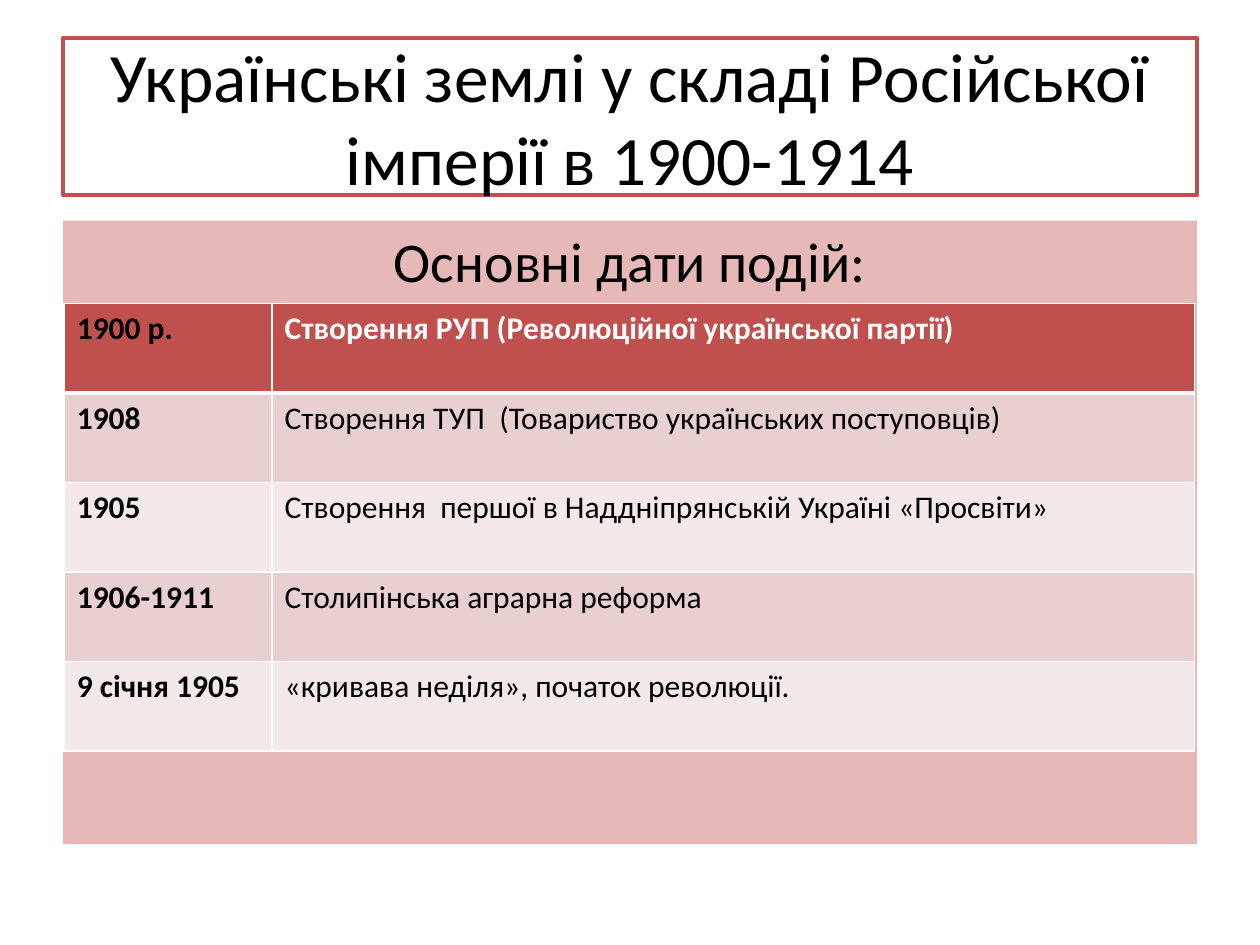
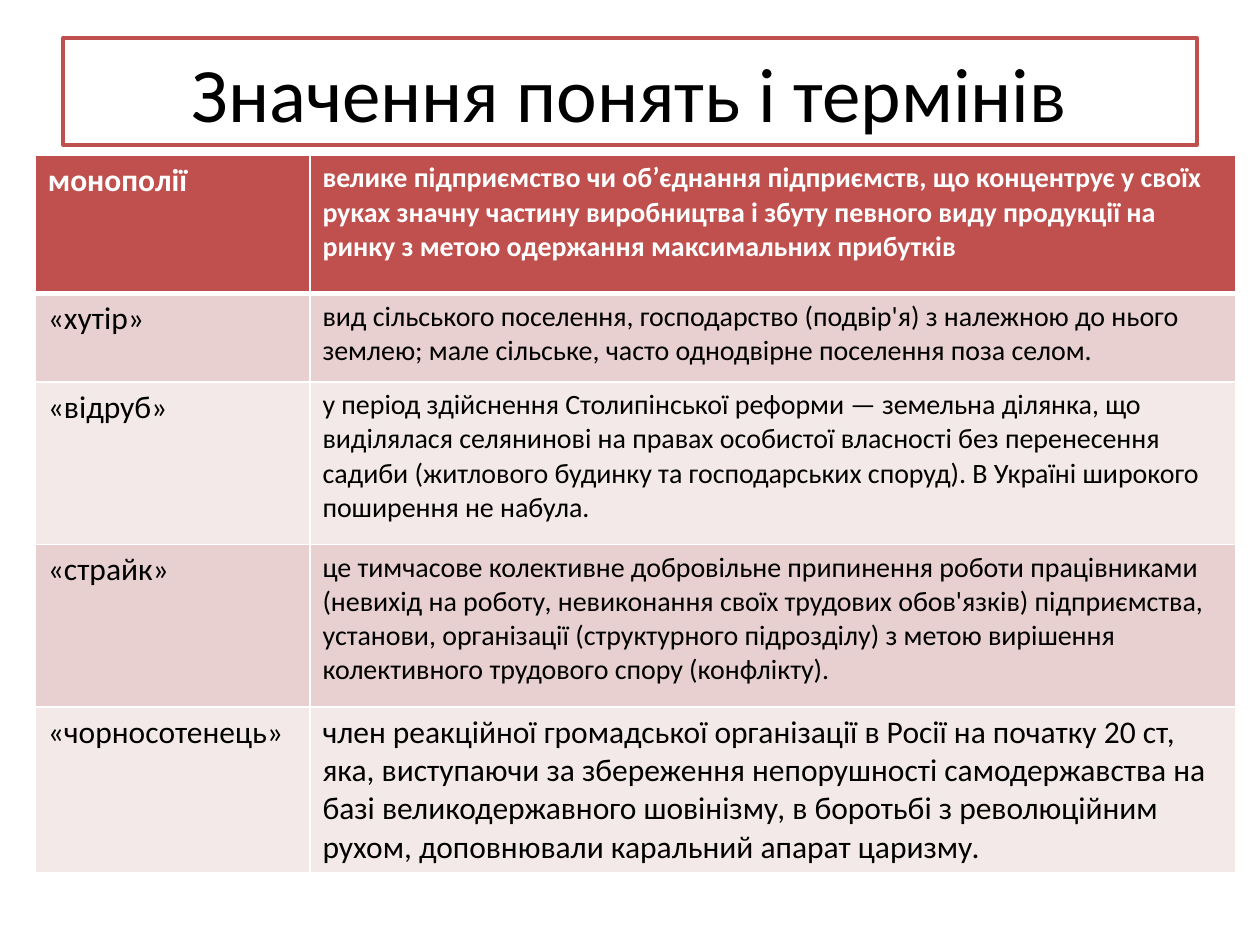
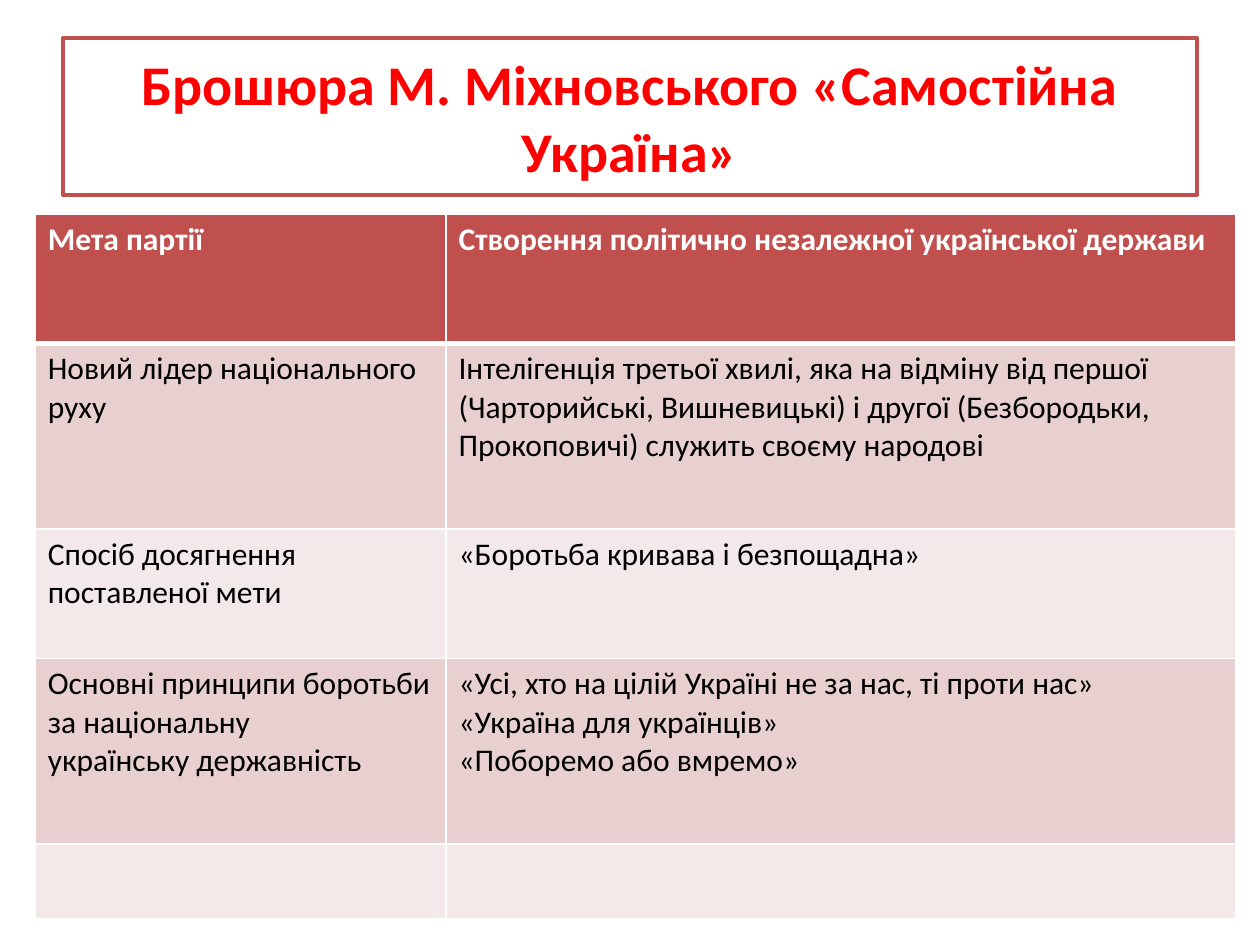
from lxml import etree
from pptx import Presentation
from pptx.dml.color import RGBColor
from pptx.enum.text import MSO_ANCHOR, MSO_AUTO_SIZE, PP_ALIGN
from pptx.oxml.ns import qn
from pptx.util import Pt

CENTER = PP_ALIGN.CENTER
LEFT = PP_ALIGN.LEFT
MIDDLE = MSO_ANCHOR.MIDDLE
NO_AUTOFIT = MSO_AUTO_SIZE.NONE

WHITE = RGBColor(0xFF, 0xFF, 0xFF)
BLACK = RGBColor(0x00, 0x00, 0x00)
BRIGHT_RED = RGBColor(0xFF, 0x00, 0x00)
RED = RGBColor(0xC0, 0x50, 0x4D)
PINK = RGBColor(0xE6, 0xB9, 0xB8)
DARK_BAND = RGBColor(0xE8, 0xD0, 0xD0)
LIGHT_BAND = RGBColor(0xF4, 0xE9, 0xE9)
FONT = "Calibri"
TITLE_LAYOUT = {True: 1, False: 5}


def write(frame, text, size=18, color=BLACK, bold=False, align=LEFT):
    frame.word_wrap = True
    for index, line in enumerate(text.split("\n")):
        para = frame.paragraphs[0] if index == 0 else frame.add_paragraph()
        para.alignment = align
        span = para.add_run()
        span.text = line
        span.font.name = FONT
        span.font.size = Pt(size)
        span.font.bold = bold
        span.font.color.rgb = color


def add_border(cell, side, width):
    line = etree.SubElement(cell._tc.get_or_add_tcPr(), qn(f"a:ln{side}"), w=str(Pt(width)))
    fill = etree.SubElement(line, qn("a:solidFill"))
    etree.SubElement(fill, qn("a:srgbClr"), val=str(WHITE))


pages = [
    {
        "title": "Українські землі у складі Російської імперії в 1900-1914",
        "title_format": {"size": 39.6},
        "title_height": 90,
        "subtitle": "Основні дати подій:",
        "table_at": (36.72, 173.52),
        "columns": (118.8, 527.04),
        "heights": [51.12] * 5,
        "bold_dates": True,
        "definition_sizes": [18] * 5,
        "rows": [
            ("1900 р.", "Створення РУП (Революційної української партії)"),
            ("1908", "Створення ТУП  (Товариство українських поступовців)"),
            ("1905", "Створення  першої в Наддніпрянській Україні «Просвіти»"),
            ("1906-1911", "Столипінська аграрна реформа"),
            ("9 січня 1905", "«кривава неділя», початок революції."),
        ],
    },
    {
        "title": "Значення понять і термінів",
        "title_format": {"size": 44},
        "title_height": 61.2,
        "subtitle": None,
        "table_at": (20.16, 88.56),
        "columns": (156.96, 529.2),
        "heights": [79.2, 50.4, 92.88, 92.88, 94.8],
        "bold_dates": False,
        "definition_sizes": [16, 16, 16, 16, 18],
        "rows": [
            ("монополії", "велике підприємство чи об’єднання підприємств, що концентрує у своїх "
             "руках значну частину виробництва і збуту певного виду продукції на ринку з метою "
             "одержання максимальних прибутків"),
            ("«хутір»", "вид сільського поселення, господарство (подвір'я) з належною до нього "
             "землею; мале сільське, часто однодвірне поселення поза селом."),
            ("«відруб»", "у період здійснення Столипінської реформи — земельна ділянка, що "
             "виділялася селянинові на правах особистої власності без перенесення садиби "
             "(житлового будинку та господарських споруд). В Україні широкого поширення не набула."),
            ("«страйк»", "це тимчасове колективне добровільне припинення роботи працівниками "
             "(невихід на роботу, невиконання своїх трудових обов'язків) підприємства, установи, "
             "організації (структурного підрозділу) з метою вирішення колективного трудового "
             "спору (конфлікту)."),
            ("«чорносотенець»", "член реакційної громадської організації в Росії на початку 20 ст, "
             "яка, виступаючи за збереження непорушності самодержавства на базі великодержавного "
             "шовінізму, в боротьбі з революційним рухом, доповнювали каральний апарат царизму."),
        ],
    },
    {
        "title": "Брошюра М. Міхновського «Самостійна Україна»",
        "title_format": {"size": 32, "color": BRIGHT_RED, "bold": True},
        "title_height": 90,
        "subtitle": None,
        "table_at": (20.16, 122.4),
        "columns": (234.72, 451.44),
        "heights": [74, 106, 74, 106, 42.8],
        "bold_dates": False,
        "definition_sizes": [18] * 5,
        "rows": [
            ("Мета партії", "Створення політично незалежної української держави"),
            ("Новий лідер національного руху", "Інтелігенція третьої хвилі, яка на відміну від "
             "першої (Чарторийські, Вишневицькі) і другої (Безбородьки, Прокоповичі) служить "
             "своєму народові"),
            ("Спосіб досягнення\nпоставленої мети", "«Боротьба кривава і безпощадна»"),
            ("Основні принципи боротьби за національну\nукраїнську державність",
             "«Усі, хто на цілій Україні не за нас, ті проти нас»\n«Україна для українців»\n"
             "«Поборемо або вмремо»"),
            ("", ""),
        ],
    },
]

deck = Presentation()
deck.slide_width = Pt(720)
deck.slide_height = Pt(540)

for content in pages:
    has_subtitle = content["subtitle"] is not None
    page = deck.slides.add_slide(deck.slide_layouts[TITLE_LAYOUT[has_subtitle]])

    title = page.shapes.title
    title.left, title.top = Pt(36), Pt(21.6)
    title.width, title.height = Pt(648), Pt(content["title_height"])
    title.fill.solid()
    title.fill.fore_color.rgb = WHITE
    title.line.color.rgb = RED
    title.line.width = Pt(2)
    title.text_frame.auto_size = NO_AUTOFIT
    title.text_frame.vertical_anchor = MIDDLE
    write(title.text_frame, content["title"], align=CENTER, **content["title_format"])

    if has_subtitle:
        body = page.placeholders[1]
        body.left, body.top, body.width, body.height = Pt(36), Pt(126), Pt(648), Pt(356.4)
        body.fill.solid()
        body.fill.fore_color.rgb = PINK
        body.text_frame.auto_size = NO_AUTOFIT
        write(body.text_frame, content["subtitle"], size=32, align=CENTER)
        properties = body.text_frame.paragraphs[0]._p.get_or_add_pPr()
        properties.set("marL", "0")
        properties.set("indent", "0")
        etree.SubElement(properties, qn("a:buNone"))

    left, top = content["table_at"]
    columns, heights, rows = content["columns"], content["heights"], content["rows"]
    table = page.shapes.add_table(
        len(rows), len(columns), Pt(left), Pt(top), Pt(sum(columns)), Pt(sum(heights))
    ).table
    for column, width in zip(table.columns, columns):
        column.width = Pt(width)
    for row, height in zip(table.rows, heights):
        row.height = Pt(height)

    for row_index, texts in enumerate(rows):
        is_header = row_index == 0
        band = RED if is_header else (LIGHT_BAND, DARK_BAND)[row_index % 2]
        for column_index, text in enumerate(texts):
            cell = table.cell(row_index, column_index)
            add_border(cell, "L", 1)
            add_border(cell, "R", 1)
            add_border(cell, "T", 3 if row_index == 1 else 1)
            add_border(cell, "B", 3 if is_header else 1)
            cell.fill.solid()
            cell.fill.fore_color.rgb = band
            is_date = content["bold_dates"] and column_index == 0
            if text:
                write(
                    cell.text_frame,
                    text,
                    size=content["definition_sizes"][row_index] if column_index else 18,
                    color=WHITE if is_header and not is_date else BLACK,
                    bold=is_header or is_date,
                )

deck.save("out.pptx")
